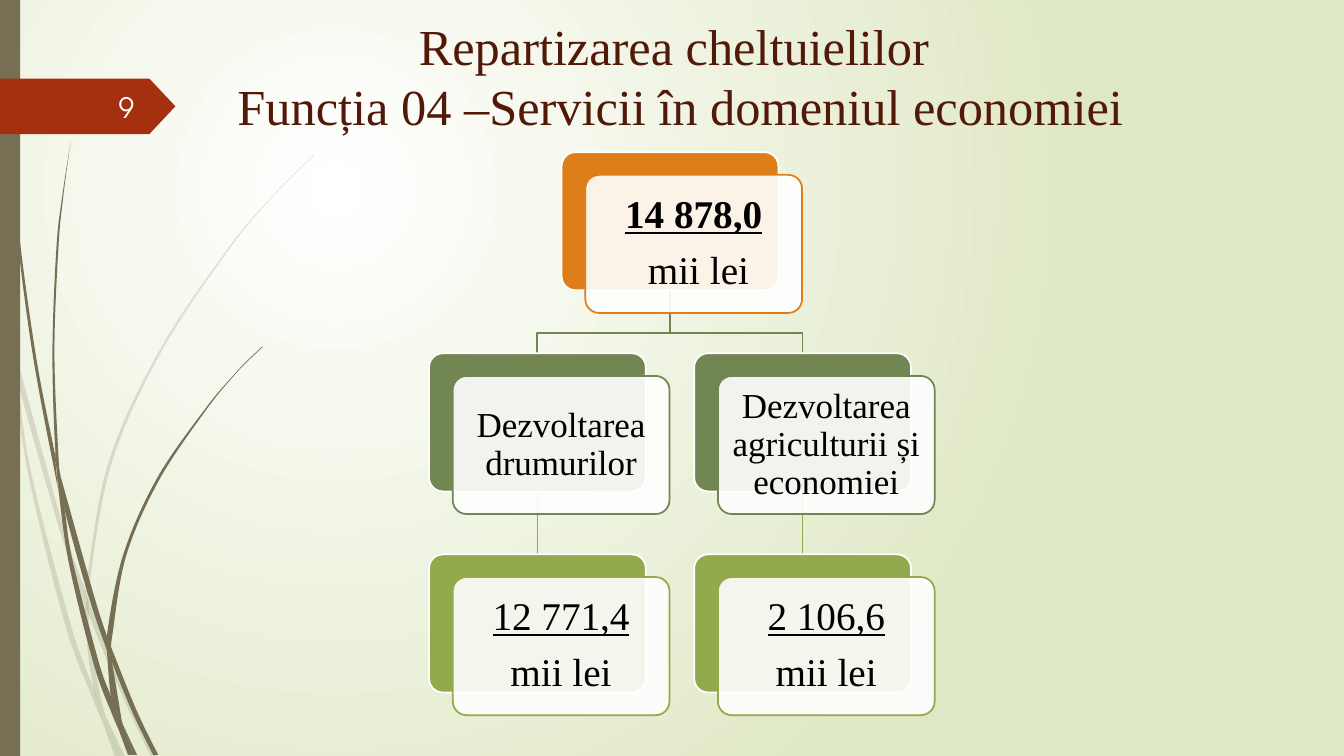
import dataclasses
import typing

import lxml.etree
import pptx
import pptx.dml.color
import pptx.enum.shapes
import pptx.enum.text
import pptx.oxml.ns
import pptx.util

COLOURS = {
    "white": "FFFFFF", "meadow": "DFE8C4", "stem": "766F54", "flag": "A53010", "title": "521808",
    "number": "FEFFFF", "black": "000000", "orange": "DE7E18", "green": "728653", "lime": "92AA4C",
}
SERIF, SANS = "Times New Roman", "TeX Gyre Adventor"
CELL = pptx.util.Inches(0.01)
COLUMNS, ROWS = 1333, 750
CARD_WIDTH, CARD_HEIGHT, CARD_INSET = 215, 137, 4
CARD_LEFT, CARD_TOP = 425.5, 151
COLUMN_STEP, ROW_STEP = 131.5, 199.5
FRONT_RIGHT, FRONT_DOWN = 23.5, 22.5
ELBOW_DROP = 42.5

Edge = tuple[tuple[float, float], ...]
SHAPES = pptx.enum.shapes.MSO_SHAPE
ALIGN = pptx.enum.text.PP_ALIGN
MIDDLE = pptx.enum.text.MSO_ANCHOR.MIDDLE
name_of = pptx.oxml.ns.qn

class Line(typing.NamedTuple):
    text: str
    size: int = 28
    bold: bool = False
    underline: bool = False

class Blade(typing.NamedTuple):
    edge: Edge
    back: Edge

@dataclasses.dataclass(frozen=True)
class Card:
    column: int
    row: int
    colour: str
    lines: tuple[Line, ...]

    @property
    def left(self) -> float:
        return CARD_LEFT + self.column * COLUMN_STEP

    @property
    def top(self) -> float:
        return CARD_TOP + self.row * ROW_STEP

    @property
    def middle(self) -> float:
        return self.left + CARD_WIDTH / 2

    @property
    def bottom(self) -> float:
        return self.top + CARD_HEIGHT

PALE_BLADES = (
    Blade(((11, 350), (9, 322), (0, 282)), ((0, 299), (10, 344), (11, 350))),
    Blade(((14, 345), (17, 376), (58, 522), (84, 599)), ((85, 586), (62, 520), (14, 345))),
    Blade(((88, 596), (88, 610), (123, 694), (150, 751)), ((155, 751), (127, 692), (92, 607), (88, 596))),
    Blade(((105, 711), (119, 751)), ((124, 751), (105, 711))),
    Blade(((11, 350), (28, 470), (65, 621), (92, 693), (101, 714)),
          ((93, 683), (70, 619), (31, 469), (17, 376), (11, 350))),
    Blade(((84, 599), (87, 646), (93, 683), (96, 692), (105, 711)),
          ((103, 706), (91, 646), (88, 610), (88, 608), (84, 599))),
    Blade(((88, 596), (88, 584), (110, 462), (160, 349), (229, 245), (268, 198), (290, 175), (312, 154)),
          ((312, 153), (289, 175), (268, 197), (228, 244), (158, 348), (107, 461), (85, 584), (85, 586))),
    Blade(((101, 714), (114, 751)), ((119, 751), (101, 714))),
    Blade(((88, 608), (88, 610), (88, 596)), ((85, 586), (84, 599))),
    Blade(((93, 683), (99, 707), (101, 714), (119, 751)), ((119, 751), (105, 711), (96, 692))),
)
DARK_BLADES = (
    Blade(((3, 0), (4, 48), (7, 110), (17, 233), (33, 355), (56, 477), (57, 481)),
          ((55, 457), (55, 453), (36, 355), (19, 232), (8, 109), (5, 48), (4, 0))),
    Blade(((60, 472), (64, 505), (88, 592), (106, 645)), ((106, 633), (106, 631), (93, 590), (60, 472))),
    Blade(((110, 641), (111, 656), (132, 708), (152, 749)), ((157, 749), (136, 706), (113, 649), (110, 641))),
    Blade(((57, 477), (68, 557), (93, 659), (111, 708), (117, 722)),
          ((116, 717), (110, 691), (98, 657), (72, 556), (64, 505), (57, 477))),
    Blade(((60, 472), (58, 453), (54, 349), (58, 245), (63, 193), (70, 141)),
          ((70, 141), (62, 193), (56, 245), (52, 349), (55, 449), (60, 472))),
    Blade(((122, 719), (133, 749)), ((136, 749), (122, 719))),
    Blade(((57, 477), (64, 505)), ((60, 472), (55, 449), (55, 453), (57, 477))),
    Blade(((111, 633), (125, 552), (158, 476), (205, 406), (231, 374), (245, 359), (261, 344)),
          ((260, 344), (245, 358), (231, 373), (204, 405), (156, 474), (122, 551), (106, 631), (110, 641))),
    Blade(((117, 722), (127, 749)), ((131, 749), (117, 722))),
    Blade(((106, 645), (110, 691), (116, 706), (122, 719)), ((121, 716), (111, 656), (109, 651), (106, 645))),
    Blade(((106, 645), (109, 651), (111, 656), (110, 641)), ((106, 631), (106, 633))),
    Blade(((110, 691), (116, 717), (117, 722), (130, 749)), ((133, 749), (122, 719), (116, 706))),
)
TOTAL = Card(1, 0, "orange", (Line("14 878,0", 28, True, True), Line(" mii lei")))
BRANCHES = (
    (Card(0, 1, "green", (Line("Dezvoltarea drumurilor", 25),)),
     Card(0, 2, "lime", (Line("12 771,4", underline=True), Line("mii lei")))),
    (Card(2, 1, "green", (Line("Dezvoltarea agriculturii și economiei", 25),)),
     Card(2, 2, "lime", (Line("2 106,6", underline=True), Line("mii lei")))),
)

def cells(*counts: float) -> list[pptx.util.Emu]:
    return [pptx.util.Emu(round(count * CELL)) for count in counts]

def rgb(name: str) -> pptx.dml.color.RGBColor:
    return pptx.dml.color.RGBColor.from_string(COLOURS[name])

def apply(target: typing.Any, **values: typing.Any) -> None:
    for name, value in values.items():
        setattr(target, name, value)

def add_xml(parent: typing.Any, tag: str, **values: str) -> typing.Any:
    return lxml.etree.SubElement(parent, name_of(tag), values)

def style(shape: typing.Any, fill: str | None, line: str | None = None, opacity: int = 100) -> None:
    shape.shadow.inherit = False
    shape.fill.background()
    if fill:
        shape.fill.solid()
        shape.fill.fore_color.rgb = rgb(fill)
    if opacity < 100:
        add_xml(shape.fill._xPr.find(".//" + name_of("a:srgbClr")), "a:alpha", val=str(opacity * 1000))
    shape.line.fill.background()
    if line:
        shape.line.color.rgb = rgb(line)
        shape.line.width = pptx.util.Pt(1.25)

def write(para: typing.Any, text: str, colour: str, size: int, **font: typing.Any) -> None:
    para.text = text
    for span in para.runs:
        apply(span.font, size=pptx.util.Pt(size), **font)
        span.font.color.rgb = rgb(colour)

def paint_background(page: typing.Any) -> None:
    fill = page.background.fill
    fill.gradient()
    for stop, name in zip(fill.gradient_stops, ("white", "meadow")):
        stop.color.rgb = rgb(name)
    gradient = page._element.find(".//" + name_of("a:gradFill"))
    gradient.remove(gradient.find(name_of("a:lin")))
    circle = add_xml(gradient, "a:path", path="circle")
    add_xml(circle, "a:fillToRect", l="50000", t="50000", r="100000", b="100000")

def add_outline(page: typing.Any, points: Edge, close: bool) -> typing.Any:
    corners = [cells(*point) for point in points]
    builder = page.shapes.build_freeform(*corners[0], scale=1.0)
    builder.add_line_segments(corners[1:], close=close)
    return builder.convert_to_shape()

def bend(shape: typing.Any, segments: list[typing.Any], edge: Edge) -> None:
    padded = (edge[0], *edge, edge[-1])
    for segment, a, b, c, d in zip(segments, padded, padded[1:], padded[2:], padded[3:]):
        leave = [q + (r - p) / 6 for p, q, r in zip(a, b, c)]
        arrive = [r - (s - q) / 6 for q, r, s in zip(b, c, d)]
        segment.clear()
        segment.tag = name_of("a:cubicBezTo")
        for point in (leave, arrive, c):
            x, y = cells(*point)
            add_xml(segment, "a:pt", x=str(x - shape.left), y=str(y - shape.top))

def add_blade(page: typing.Any, blade: Blade, opacity: int) -> None:
    shape = add_outline(page, blade.edge + blade.back, True)
    segments = list(shape._element.iter(name_of("a:lnTo")))
    bend(shape, segments, blade.edge)
    bend(shape, segments[len(blade.edge):], blade.back)
    style(shape, "stem", opacity=opacity)

def add_elbow(page: typing.Any, start: Card, end: Card) -> None:
    turn = start.bottom + ELBOW_DROP
    points = ((start.middle, start.bottom), (start.middle, turn), (end.middle, turn), (end.middle, end.top))
    style(add_outline(page, points, False), None, end.colour)

def add_link(page: typing.Any, start: Card, end: Card) -> None:
    ends = cells(start.middle, start.bottom, end.middle, end.top)
    link = page.shapes.add_connector(pptx.enum.shapes.MSO_CONNECTOR.STRAIGHT, *ends)
    link.line.width = pptx.util.Pt(1.25)
    link.line.color.rgb = rgb(end.colour)
    add_xml(link._element.spPr, "a:effectLst")

def add_card(page: typing.Any, card: Card) -> None:
    left, top = card.left + FRONT_RIGHT, card.top + FRONT_DOWN
    for x, y, fill, line, opacity in ((card.left, card.top, card.colour, "white", 100),
                                      (left, top, "white", card.colour, 90)):
        box = page.shapes.add_shape(SHAPES.ROUNDED_RECTANGLE, *cells(x, y, CARD_WIDTH, CARD_HEIGHT))
        box.adjustments[0] = 0.1
        style(box, fill, line, opacity)
    frame = page.shapes.add_textbox(*cells(
        left + CARD_INSET, top + CARD_INSET,
        CARD_WIDTH - 2 * CARD_INSET, CARD_HEIGHT - 2 * CARD_INSET)).text_frame
    margins = {f"margin_{side}": cells(10)[0] for side in ("left", "right", "top", "bottom")}
    apply(frame, word_wrap=True, vertical_anchor=MIDDLE, **margins)
    for index, line in enumerate(card.lines):
        para = frame.add_paragraph() if index else frame.paragraphs[0]
        apply(para, alignment=ALIGN.CENTER, line_spacing=0.9, space_after=pptx.util.Pt(9.8))
        write(para, line.text, "black", line.size, name=SERIF, bold=line.bold, underline=line.underline)

def add_title(page: typing.Any) -> None:
    title = page.shapes.title
    apply(title, **dict(zip(("left", "top", "width", "height"), cells(150, 12, 1050, 138))))
    apply(title.text_frame, word_wrap=True, vertical_anchor=MIDDLE, margin_bottom=cells(13)[0],
          auto_size=pptx.enum.text.MSO_AUTO_SIZE.NONE)
    para = title.text_frame.paragraphs[0]
    apply(para, alignment=ALIGN.CENTER, line_spacing=0.98)
    write(para, "Repartizarea cheltuielilor \vFuncția 04 –Servicii în domeniul economiei", "title", 36, name=SERIF)

def add_page_number(page: typing.Any) -> None:
    flag = page.shapes.add_shape(SHAPES.PENTAGON, *cells(0, 78, 174, 55))
    flag.adjustments[0] = 0.47
    style(flag, "flag")
    frame = page.shapes.add_textbox(*cells(58, 86, 85, 40)).text_frame
    apply(frame, word_wrap=True, vertical_anchor=MIDDLE)
    frame.paragraphs[0].alignment = ALIGN.RIGHT
    write(frame.paragraphs[0], "9", "number", 20, name=SANS)

def main() -> None:
    deck = pptx.Presentation()
    deck.slide_width, deck.slide_height = cells(COLUMNS, ROWS)
    page = deck.slides.add_slide(deck.slide_layouts[5])
    paint_background(page)
    for blades, opacity in ((PALE_BLADES, 20), (DARK_BLADES, 100)):
        for blade in blades:
            add_blade(page, blade, opacity)
    style(page.shapes.add_shape(SHAPES.RECTANGLE, *cells(0, 0, 20, ROWS)), "stem")
    add_title(page)
    add_page_number(page)
    for activity, amount in BRANCHES:
        add_elbow(page, TOTAL, activity)
        add_link(page, activity, amount)
    for card in (TOTAL, *BRANCHES[0], *BRANCHES[1]):
        add_card(page, card)
    deck.save("out.pptx")

if __name__ == "__main__":
    main()
